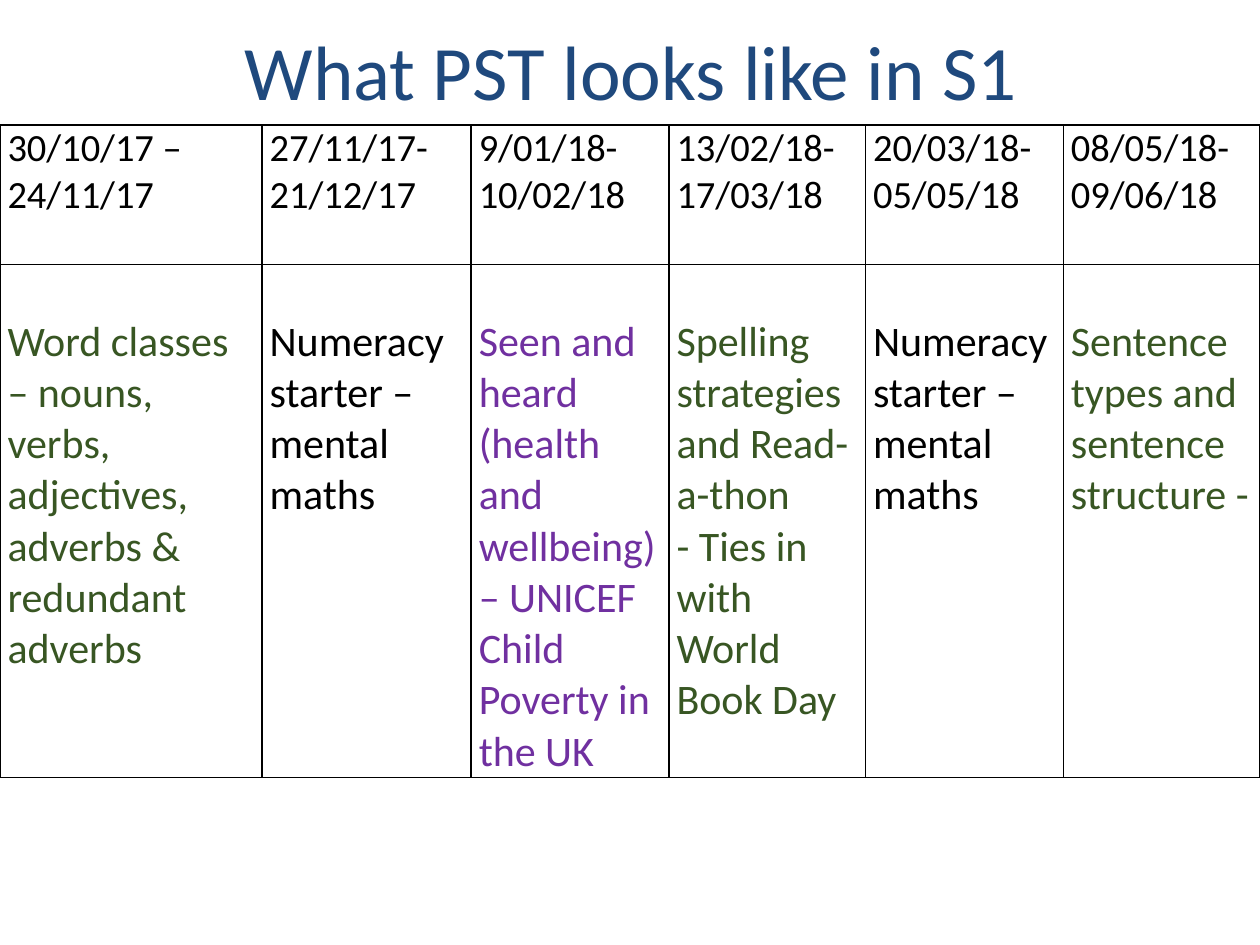
"""Build the slide with the S1 PST timetable."""
from lxml import etree
from pptx import Presentation
from pptx.dml.color import RGBColor
from pptx.enum.text import MSO_ANCHOR, PP_ALIGN
from pptx.oxml.ns import qn
from pptx.util import Inches, Pt

MIDDLE, CENTER = MSO_ANCHOR.MIDDLE, PP_ALIGN.CENTER
BLACK = RGBColor(0x00, 0x00, 0x00)
NAVY = RGBColor(0x1F, 0x49, 0x7D)
GREEN = RGBColor(0x38, 0x56, 0x23)
PURPLE = RGBColor(0x70, 0x30, 0xA0)
FONT = "Calibri"

TITLE = "What PST looks like in S1"
NUMERACY = "Numeracy starter – mental maths"
BLOCKS = [  # width, dates, topic, topic colour
    (2.08, "30/10/17 – 24/11/17",
     "Word classes – nouns, verbs, adjectives, adverbs & redundant adverbs", GREEN),
    (1.66, "27/11/17-\n21/12/17", NUMERACY, BLACK),
    (1.57, "9/01/18-\n10/02/18",
     "Seen and heard (health and wellbeing) – UNICEF Child Poverty in the UK", PURPLE),
    (1.56, "13/02/18-17/03/18",
     "Spelling strategies and Read-a-thon\n- Ties in with World Book Day", GREEN),
    (1.57, "20/03/18-\n05/05/18", NUMERACY, BLACK),
    (1.56, "08/05/18-\n09/06/18", "Sentence types and sentence structure -", GREEN),
]
ROWS = [  # height, top margin, text size
    (1.11, 0, 22),
    (4.07, 0.41, 24),
]


def style(tf, size, color):
    for p in tf.paragraphs:
        for r in p.runs:
            r.font.name, r.font.size = FONT, Pt(size)
            r.font.color.rgb = color


def add_borders(cell):
    tcPr = cell._tc.get_or_add_tcPr()
    for side in ("lnL", "lnR", "lnT", "lnB"):
        ln = etree.SubElement(tcPr, qn(f"a:{side}"), w=str(Pt(1)))
        fill = etree.SubElement(ln, qn("a:solidFill"))
        etree.SubElement(fill, qn("a:srgbClr"), val=str(BLACK))


def fill_cell(cell, text, top, size, color):
    cell.text = text
    margins = {"margin_left": 0.06, "margin_right": 0.06,
               "margin_top": top, "margin_bottom": 0}
    for name, value in margins.items():
        setattr(cell, name, Inches(value))
    style(cell.text_frame, size, color)
    add_borders(cell)
    cell.fill.background()


def main():
    prs = Presentation()
    prs.slide_width, prs.slide_height = Inches(10), Inches(7.5)
    s = prs.slides.add_slide(prs.slide_layouts[5])

    title = s.shapes.title
    box = {"left": 0.51, "top": 0.13, "width": 9, "height": 0.85}
    for name, value in box.items():
        setattr(title, name, Inches(value))
    tf = title.text_frame
    tf.text = TITLE
    tf.vertical_anchor = MIDDLE
    tf.paragraphs[0].alignment = CENTER
    style(tf, 44, NAVY)

    height = sum(row[0] for row in ROWS)
    table = s.shapes.add_table(len(ROWS), len(BLOCKS), 0, Inches(0.99),
                               prs.slide_width, Inches(height)).table
    for i, (row_height, top, size) in enumerate(ROWS):
        table.rows[i].height = Inches(row_height)
        for j, (width, dates, topic, color) in enumerate(BLOCKS):
            table.columns[j].width = Inches(width)
            text, ink = ((dates, BLACK), (topic, color))[i]
            fill_cell(table.cell(i, j), text, top, size, ink)
    table.first_row = table.horz_banding = False

    prs.save("out.pptx")


if __name__ == "__main__":
    main()
